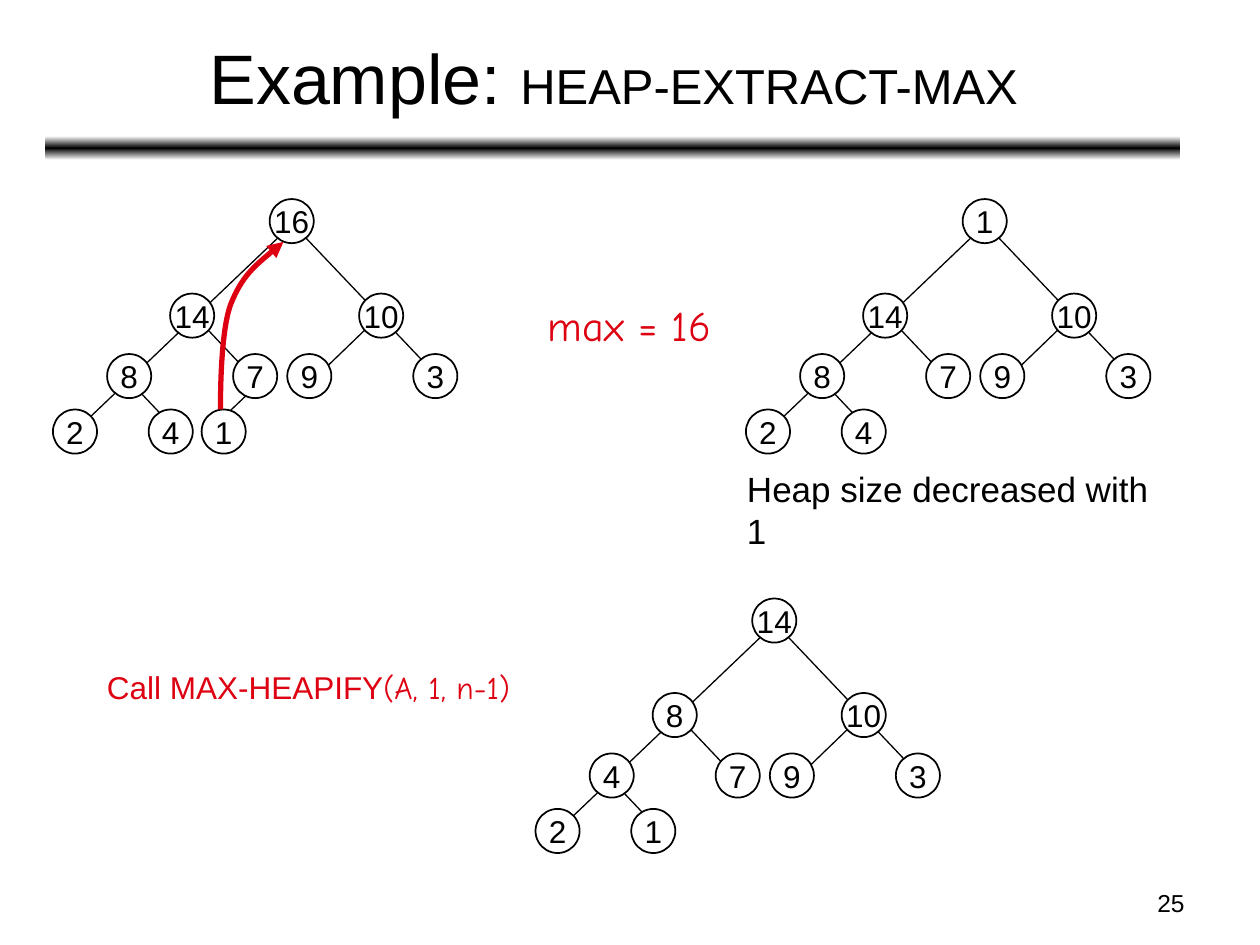
"""Build a slide that shows a heap before, during and after taking its maximum."""
import copy

import pptx
import pptx.dml.color
import pptx.enum.shapes
import pptx.enum.text
import pptx.oxml
import pptx.oxml.ns
import pptx.util

COLORS = {"ink": "000000", "paper": "FFFFFF", "red": "DD0111"}
COLS, ROWS = 100, 75
NODE = 3.5
SPOTS = [(17.2, 0), (9.3, 7.5), (24.3, 7.5), (4.3, 12.3), (14.3, 12.3),
         (18.6, 12.3), (28.6, 12.3), (0, 16.7), (7.6, 16.7), (11.8, 16.7)]
LINES = [((20.5, 14.5), (26.1, 9.1)), ((10.3, 18.9), (5, 13.3)),
         ((16.2, 14.5), (10.9, 8.9)), ((31.3, 14.9), (18, 0.9)),
         ((1.8, 18.4), (19.3, 1.7)), ((12.4, 18.4), (16.9, 14.1))]
HEAPS = [((4.2, 15.8), [16, 14, 10, 8, 7, 9, 3, 2, 4, 1]),
         ((59.2, 15.8), [1, 14, 10, 8, 7, 9, 3, 2, 4]),
         ((42.5, 47.5), [14, 8, 10, 4, 7, 9, 3, 2, 1])]
CURVE = [(22.5, 19.2), (20.8, 20.6), (19.2, 21.9), (18.3, 24.2),
         (17.5, 26.4), (17.5, 31.5), (17.5, 32.5)]


def tint(name):
    return pptx.dml.color.RGBColor.from_string(COLORS[name])


class Painter:
    def __init__(self, deck):
        self.deck = deck
        self.slide = deck.slides.add_slide(deck.slide_layouts[5])
        self.shapes = self.slide.shapes

    def place(self, *cells):
        units = (self.deck.slide_width / COLS, self.deck.slide_height / ROWS)
        return [round(cell * units[i % 2]) for i, cell in enumerate(cells)]

    def letter(self, frame, runs, color="ink", align="LEFT"):
        para = frame.paragraphs[0]
        para.alignment = pptx.enum.text.PP_ALIGN[align]
        for text, size, face in runs:
            run = para.add_run()
            run.text = text
            run.font.size = pptx.util.Pt(size)
            run.font.name = face
            run.font.color.rgb = tint(color)

    def title(self, box, runs):
        head = self.shapes.title
        head.left, head.top, head.width, head.height = self.place(*box)
        head.text_frame.vertical_anchor = pptx.enum.text.MSO_ANCHOR.MIDDLE
        self.letter(head.text_frame, runs, align="CENTER")

    def label(self, box, runs, color="ink", align="LEFT"):
        frame = self.shapes.add_textbox(*self.place(*box)).text_frame
        frame.word_wrap = True
        self.letter(frame, runs, color, align)

    def bar(self, box):
        kind = pptx.enum.shapes.MSO_SHAPE.ROUNDED_RECTANGLE
        shape = self.shapes.add_shape(kind, *self.place(*box))
        shape.shadow.inherit = False
        shape.line.fill.background()
        shape.fill.gradient()
        shape.fill.gradient_angle = 90
        stops = shape._element.spPr.find(".//" + pptx.oxml.ns.qn("a:gsLst"))
        stops.insert(1, copy.deepcopy(stops[0]))
        for i, stop in enumerate(shape.fill.gradient_stops):
            stop.position = i / 2
            stop.color.rgb = tint("ink" if i == 1 else "paper")

    def line(self, start, end):
        kind = pptx.enum.shapes.MSO_CONNECTOR.STRAIGHT
        link = self.shapes.add_connector(kind, *self.place(*start, *end))
        link.line.color.rgb = tint("ink")
        link.line.width = pptx.util.Pt(0.75)
        link._element.spPr.append(pptx.oxml.parse_xml(
            f'<a:effectLst {pptx.oxml.ns.nsdecls("a")}/>'))

    def node(self, left, top, value):
        kind = pptx.enum.shapes.MSO_SHAPE.OVAL
        shape = self.shapes.add_shape(kind, *self.place(left, top, NODE, NODE))
        shape.shadow.inherit = False
        shape.fill.solid()
        shape.fill.fore_color.rgb = tint("paper")
        shape.line.color.rgb = tint("ink")
        shape.line.width = pptx.util.Pt(1)
        frame = shape.text_frame
        frame.word_wrap = False
        frame.margin_left = frame.margin_right = 0
        frame.margin_top = frame.margin_bottom = 0
        frame.vertical_anchor = pptx.enum.text.MSO_ANCHOR.MIDDLE
        self.letter(frame, [(str(value), 18, "Arial")], align="CENTER")

    def heap(self, left, top, values):
        count = len(LINES) if len(values) == len(SPOTS) else len(LINES) - 1
        for ends in LINES[:count]:
            self.line(*[(left + x, top + y) for x, y in ends])
        for (x, y), value in zip(SPOTS, values):
            self.node(left + x, top + y, value)

    def curve(self, points):
        first, *rest = [self.place(*point) for point in points]
        pen = self.shapes.build_freeform(*first)
        pen.add_line_segments(rest, close=False)
        shape = pen.convert_to_shape()
        shape.shadow.inherit = False
        shape.fill.background()
        shape.line.color.rgb = tint("red")
        shape.line.width = pptx.util.Pt(3)
        space = pptx.oxml.ns.nsdecls("a")
        props = shape._element.spPr
        legs = props.findall(".//" + pptx.oxml.ns.qn("a:lnTo"))
        for i in range(0, len(legs), 3):
            bend = pptx.oxml.parse_xml(f"<a:cubicBezTo {space}/>")
            legs[i].addprevious(bend)
            for leg in legs[i:i + 3]:
                bend.append(leg[0])
                leg.getparent().remove(leg)
        props.find(pptx.oxml.ns.qn("a:ln")).append(pptx.oxml.parse_xml(
            f'<a:headEnd {space} type="triangle"/>'))


def main():
    deck = pptx.Presentation()
    deck.slide_width = pptx.util.Inches(10)
    deck.slide_height = pptx.util.Inches(7.5)
    page = Painter(deck)
    page.bar((3.6, 10.8, 90.1, 1.9))
    page.title((3.7, 1.1, 90, 9.9),
               [("Example: ", 40, "Arial"), ("HEAP-EXTRACT-MAX", 28, "Arial")])
    for spot, values in HEAPS:
        page.heap(*spot, values)
    page.curve(CURVE)
    page.label((42.5, 23.3, 15.5, 5), [("max = 16", 24, "Comic Neue")], "red")
    page.label((58.3, 36.6, 36.1, 4.3),
               [("Heap size decreased with 1", 20, "Arial")])
    page.label((7.5, 52.5, 35.1, 4), [("Call MAX-HEAPIFY", 18, "Arial"),
                                      ("(A, 1, n-1)", 18, "Comic Neue")], "red")
    page.label((71.7, 70, 23.3, 3.5), [("25", 14, "Arial")], align="RIGHT")
    deck.save("out.pptx")


if __name__ == "__main__":
    main()
